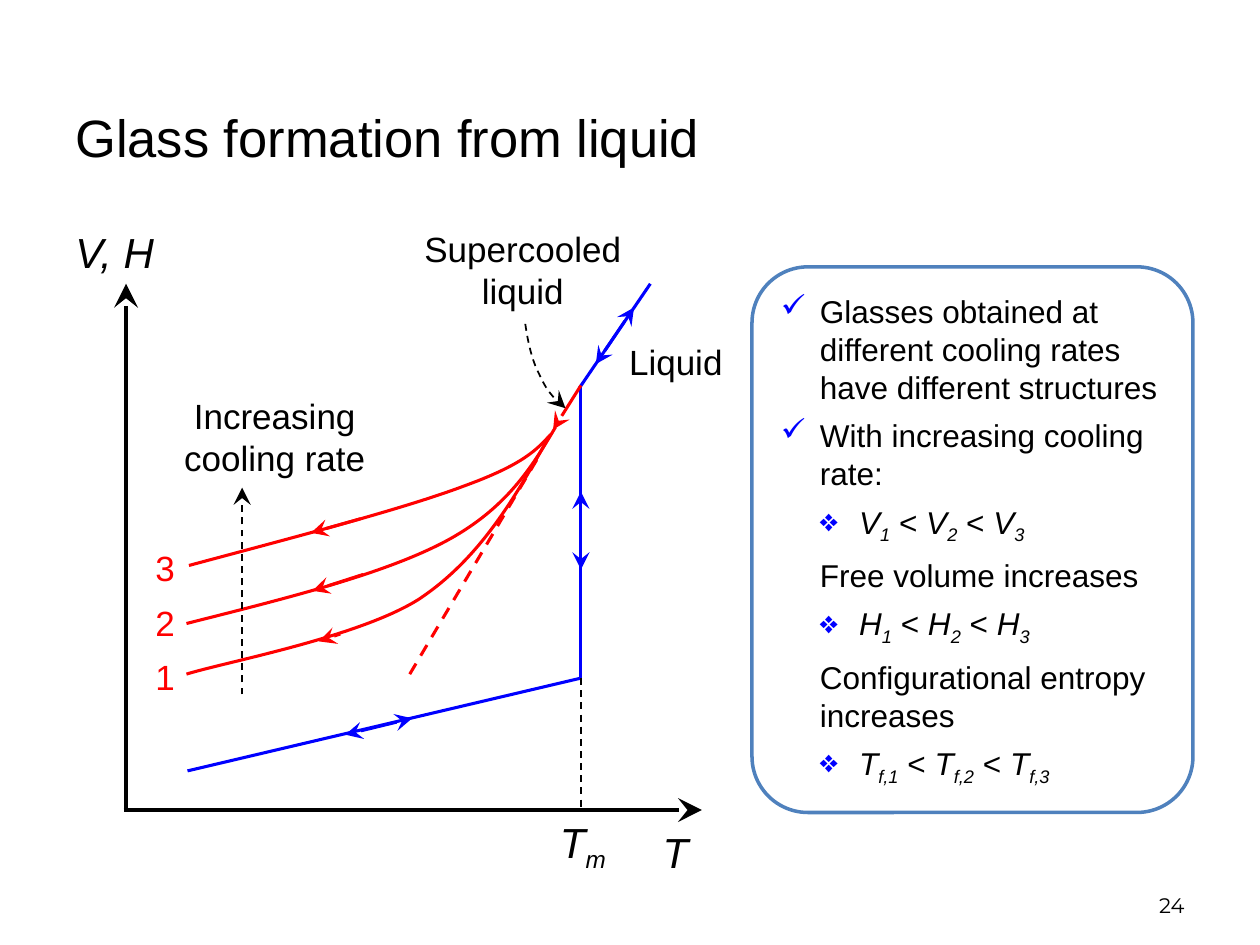
from dataclasses import dataclass

from lxml import etree
from pptx import Presentation
from pptx.dml.color import RGBColor
from pptx.enum.dml import MSO_LINE
from pptx.enum.shapes import MSO_CONNECTOR, MSO_SHAPE
from pptx.enum.text import MSO_ANCHOR, MSO_AUTO_SIZE, PP_ALIGN
from pptx.oxml.ns import qn
from pptx.util import Cm, Pt

LEFT, CENTER, RIGHT = PP_ALIGN.LEFT, PP_ALIGN.CENTER, PP_ALIGN.RIGHT
TOP, MIDDLE, BOTTOM = MSO_ANCHOR.TOP, MSO_ANCHOR.MIDDLE, MSO_ANCHOR.BOTTOM
ROUNDED, STRAIGHT, DASH = MSO_SHAPE.ROUNDED_RECTANGLE, MSO_CONNECTOR.STRAIGHT, MSO_LINE.DASH
FIT_SHAPE = MSO_AUTO_SIZE.SHAPE_TO_FIT_TEXT


@dataclass(frozen=True)
class Theme:
    font: str = "Arial"
    number_font: str = "Montserrat"
    black: str = "000000"
    white: str = "FFFFFF"
    blue: str = "0000FF"
    red: str = "FF0000"
    border: str = "4F81BD"
    title: int = 30
    axis: int = 24
    label: int = 20
    body: int = 18
    number: int = 12
    axis_line: float = 2.75
    curve_line: float = 1.75
    guide_line: float = 1
    border_line: float = 2


THEME = Theme()

# All places below are in centimetres.
TITLE = ("Glass formation from liquid", (1.27, 1.27, 22.66, 2.97))
PAGE_NUMBER = ("24", (18.21, 17.35, 5.92, 1.27))
AXIS_LABELS = [  # symbol, subscript, box, alignment
    ("V, H", "", (1.27, 4.45, 2.11, 1.27), LEFT),
    ("T", "", (13.11, 16.54, 1.04, 1.27), LEFT),
    ("T", "m", (11, 16.33, 1.5, 1.27), CENTER),
]
REGION_LABELS = [
    ("Supercooled liquid", (8.1, 4.47, 4.88, 1.96)),
    ("Liquid", (12.09, 6.73, 3.07, 1.12)),
    ("Increasing\ncooling rate", (3.1, 7.82, 4.88, 1.96)),
]
RATE_LABELS = [("3", 10.9), ("2", 12.01), ("1", 13.08)]
RATE_LABEL_LEFT, RATE_LABEL_SIZE = 2.67, (1.32, 1.12)

AXES = [((2.54, 16.31), (2.54, 5.72)), ((2.49, 16.33), (14.15, 16.33))]
MELTING, FREEZING = (11.71, 7.77), (11.71, 13.67)
EQUILIBRIUM = [((13.11, 5.72), (11.68, 7.82)), (MELTING, FREEZING), (FREEZING, (3.78, 15.54))]
REVERSIBLE = [((12.78, 6.2), (12.01, 7.34)), ((11.71, 9.91), (11.71, 11.48)),
              ((8.31, 14.48), (6.96, 14.81))]
COOLING = [(MELTING, (11.15, 8.66)), ((7.26, 10.46), (6.27, 10.74)),
           ((7.32, 11.58), (6.3, 11.91)), ((6.86, 12.78), (6.43, 12.93))]
EXTRAPOLATION = ((10.82, 9.27), (8.23, 13.64))
MELTING_GUIDE = (FREEZING, (11.71, 16.26))
RATE_GUIDE = ((4.88, 14), (4.88, 9.83))

# Start point, then two control points and an end point for each Bézier piece.
GLASS_CURVES = [
    [(11.1, 8.76), (10.82, 9.07), (10.54, 9.37), (9.35, 9.8),
     (8.13, 10.26), (5.97, 10.82), (3.81, 11.4)],
    [(11.2, 8.61), (10.72, 9.42), (10.21, 10.26), (8.97, 10.92),
     (7.72, 11.58), (5.74, 12.07), (3.76, 12.57)],
    [(11.02, 8.89), (10.34, 10.11), (9.63, 11.3), (8.43, 12.09),
     (7.21, 12.85), (4.57, 13.34), (3.76, 13.59)],
]
SUPERCOOLED_POINTER = [(10.59, 6.53), (10.64, 6.88), (10.72, 7.26), (10.87, 7.54),
                       (11, 7.82), (11.18, 8.08), (11.4, 8.23)]

PANEL_BOX, PANEL_ROUNDING = (15.16, 5.38, 8.89, 11), 0.127
INDENT = 0.79
POINTS = [  # bullet, indent level, text or (symbol, subscripts)
    ("✓", 1, "Glasses obtained at different cooling rates have different structures"),
    ("✓", 1, "With increasing cooling rate:"),
    ("❖", 2, ("V", ("1", "2", "3"))),
    ("", 1, "Free volume increases"),
    ("❖", 2, ("H", ("1", "2", "3"))),
    ("", 1, "Configurational entropy increases"),
    ("❖", 2, ("T", ("f,1", "f,2", "f,3"))),
]


def cm(values):
    return [Cm(value) for value in values]


def style_run(run, size, color=THEME.black, font=THEME.font, italic=False, subscript=False):
    run.font.name, run.font.size, run.font.italic = font, Pt(size), italic
    run.font.color.rgb = RGBColor.from_string(color)
    if subscript:
        run._r.get_or_add_rPr().set("baseline", "-25000")


def add_label(slide, text, box, size, color=THEME.black, align=CENTER, anchor=TOP,
              font=THEME.font, italic=False, wrap=True, grow=True):
    frame = slide.shapes.add_textbox(*cm(box)).text_frame
    frame.text = text
    frame.word_wrap, frame.vertical_anchor = wrap, anchor
    if grow:
        frame.auto_size = FIT_SHAPE
    for paragraph in frame.paragraphs:
        paragraph.alignment = align
        for run in paragraph.runs:
            style_run(run, size, color, font, italic)
    return frame


def style_line(line, color, width, dashed=False, ends=()):
    """Style a line; ends names the arrowheads, from headEnd and tailEnd in that order."""
    line.color.rgb = RGBColor.from_string(color)
    line.width = Pt(width)
    if dashed:
        line.dash_style = DASH
    for end in ends:
        etree.SubElement(line._get_or_add_ln(), qn(f"a:{end}"), type="stealth", w="lg", len="lg")


def add_line(slide, points, color, width, **style):
    start, end = points
    connector = slide.shapes.add_connector(STRAIGHT, *cm(start + end))
    style_line(connector.line, color, width, **style)
    etree.SubElement(connector._element.spPr, qn("a:effectLst"))


def add_curve(slide, points, color, width, **style):
    """Draw a freeform through the points, then join each three segments into one Bézier."""
    start, *rest = [tuple(cm(point)) for point in points]
    builder = slide.shapes.build_freeform(*start)
    builder.add_line_segments(rest, close=False)
    curve = builder.convert_to_shape()
    segments = list(curve._element.iter(qn("a:lnTo")))
    for first in range(0, len(segments), 3):
        bezier = etree.SubElement(segments[first].getparent(), qn("a:cubicBezTo"))
        for segment in segments[first:first + 3]:
            bezier.append(segment[0])
            segment.getparent().remove(segment)
    curve.fill.background()
    curve.shadow.inherit = False
    style_line(curve.line, color, width, **style)


def add_bullet(paragraph, bullet, level):
    properties = paragraph._p.get_or_add_pPr()
    properties.set("marL", str(Cm(INDENT * level)))
    properties.set("indent", str(-Cm(INDENT) if bullet else 0))
    if bullet:
        bullet_color = etree.SubElement(properties, qn("a:buClr"))
        etree.SubElement(bullet_color, qn("a:srgbClr"), val=THEME.blue)
        etree.SubElement(properties, qn("a:buChar"), char=bullet)
    else:
        etree.SubElement(properties, qn("a:buNone"))


def add_inequality(paragraph, symbol, subscripts):
    for position, subscript in enumerate(subscripts):
        for text, italic, lowered in ((" < ", False, False), (symbol, True, False),
                                      (subscript, True, True)):
            if position or italic:
                run = paragraph.add_run()
                run.text = text
                style_run(run, THEME.body, italic=italic, subscript=lowered)


def add_panel(slide):
    panel = slide.shapes.add_shape(ROUNDED, *cm(PANEL_BOX))
    panel.adjustments[0] = PANEL_ROUNDING
    panel.shadow.inherit = False
    panel.fill.solid()
    panel.fill.fore_color.rgb = RGBColor.from_string(THEME.white)
    style_line(panel.line, THEME.border, THEME.border_line)
    frame = panel.text_frame
    frame.word_wrap, frame.vertical_anchor = True, MIDDLE
    for position, (bullet, level, content) in enumerate(POINTS):
        paragraph = frame.add_paragraph() if position else frame.paragraphs[0]
        add_bullet(paragraph, bullet, level)
        paragraph.alignment = LEFT
        paragraph.space_before = Pt(6 if position else 0)
        if isinstance(content, str):
            paragraph.text = content
            style_run(paragraph.runs[0], THEME.body)
        else:
            add_inequality(paragraph, *content)


def add_diagram(slide):
    for axis in AXES:
        add_line(slide, axis, THEME.black, THEME.axis_line, ends=["tailEnd"])
    for branch in EQUILIBRIUM:
        add_line(slide, branch, THEME.blue, THEME.curve_line)
    for arrow in REVERSIBLE:
        add_line(slide, arrow, THEME.blue, THEME.curve_line, ends=["headEnd", "tailEnd"])
    add_line(slide, MELTING_GUIDE, THEME.black, THEME.guide_line, dashed=True)
    for curve in GLASS_CURVES:
        add_curve(slide, curve, THEME.red, THEME.curve_line)
    for arrow in COOLING:
        add_line(slide, arrow, THEME.red, THEME.curve_line, ends=["tailEnd"])
    add_line(slide, EXTRAPOLATION, THEME.red, THEME.curve_line, dashed=True)
    add_curve(slide, SUPERCOOLED_POINTER, THEME.black, THEME.guide_line,
              dashed=True, ends=["tailEnd"])
    add_line(slide, RATE_GUIDE, THEME.black, THEME.guide_line, dashed=True, ends=["tailEnd"])

    for symbol, subscript, box, align in AXIS_LABELS:
        frame = add_label(slide, symbol, box, THEME.axis, align=align, italic=True, wrap=False)
        if subscript:
            run = frame.paragraphs[0].add_run()
            run.text = subscript
            style_run(run, THEME.axis, italic=True, subscript=True)
    for text, box in REGION_LABELS:
        add_label(slide, text, box, THEME.label)
    for text, top in RATE_LABELS:
        add_label(slide, text, (RATE_LABEL_LEFT, top, *RATE_LABEL_SIZE), THEME.label, THEME.red)


def main():
    presentation = Presentation()
    presentation.slide_width, presentation.slide_height = Cm(25.4), Cm(19.05)
    slide = presentation.slides.add_slide(presentation.slide_layouts[6])
    add_label(slide, *TITLE, THEME.title, align=LEFT, anchor=MIDDLE, grow=False)
    add_diagram(slide)
    add_panel(slide)
    add_label(slide, *PAGE_NUMBER, THEME.number, align=RIGHT, anchor=BOTTOM,
              font=THEME.number_font, grow=False)
    presentation.save("out.pptx")


if __name__ == "__main__":
    main()
